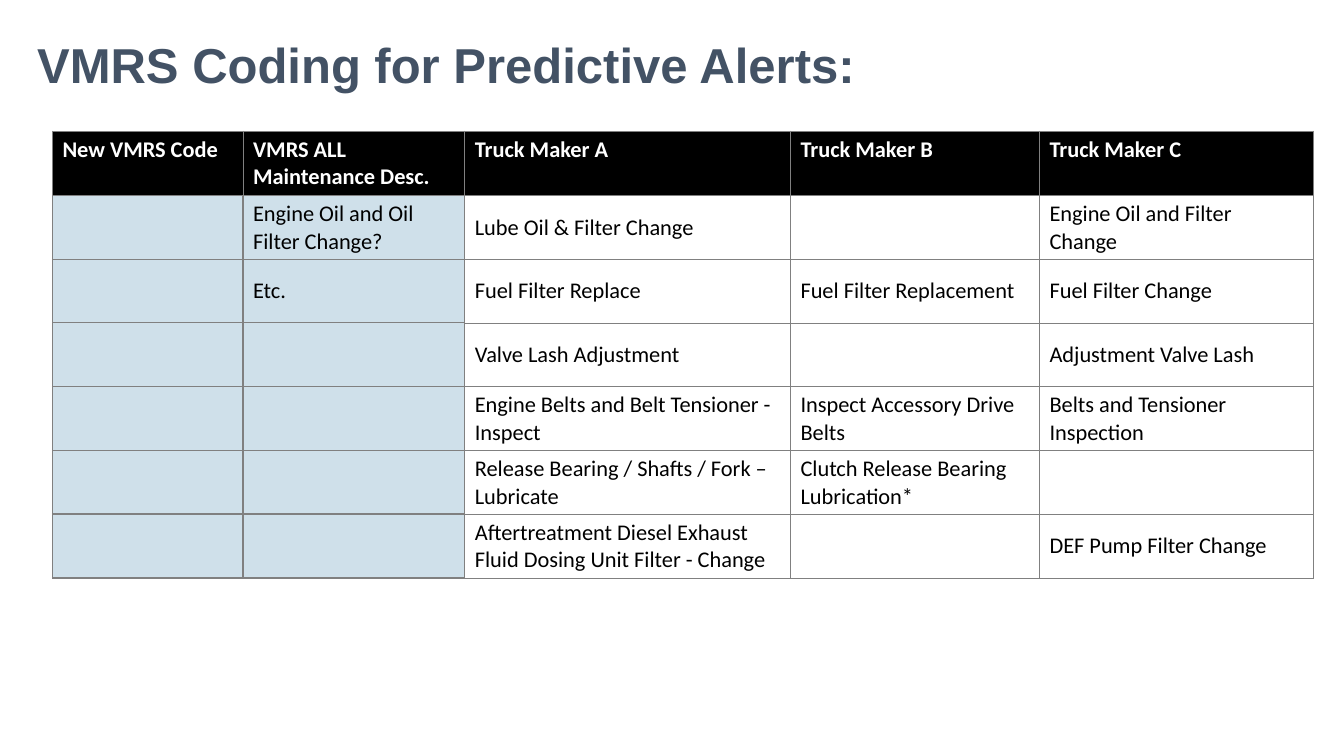
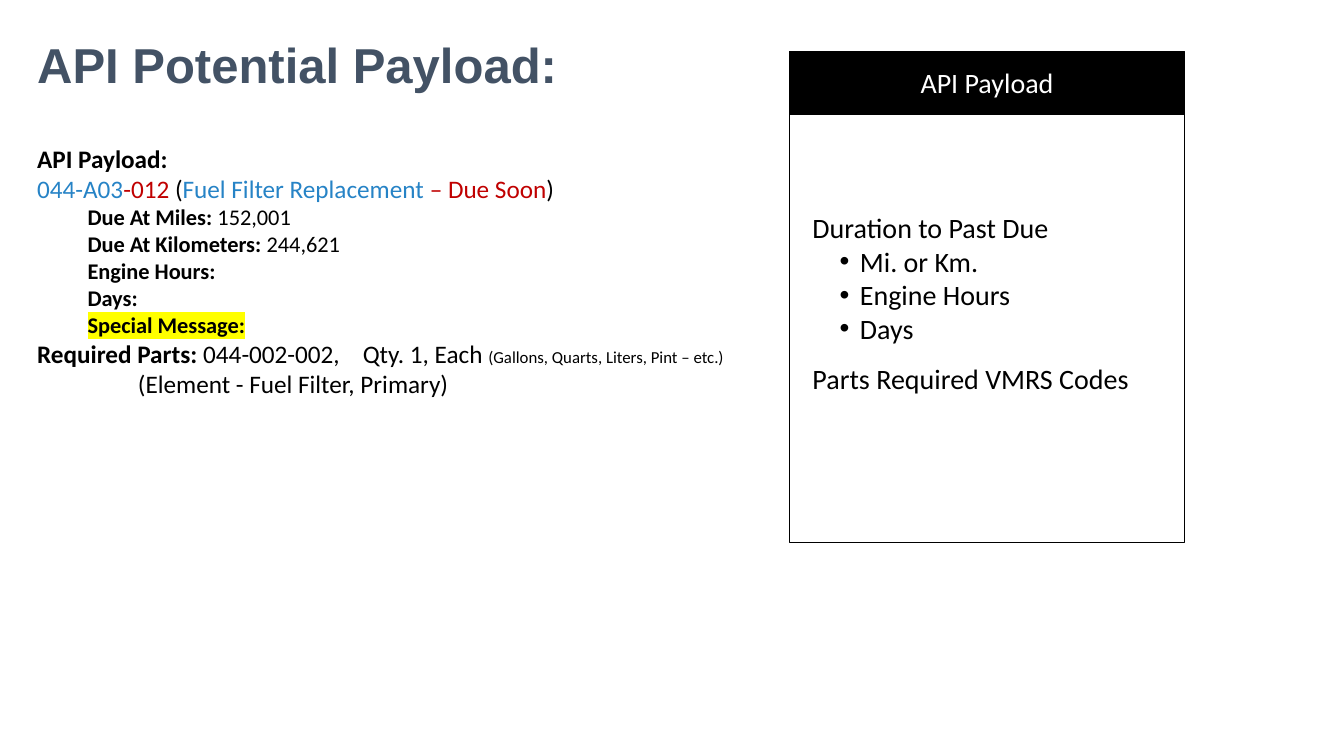
from lxml import etree
from pptx import Presentation
from pptx.dml.color import RGBColor
from pptx.enum.shapes import MSO_SHAPE
from pptx.enum.text import MSO_ANCHOR, PP_ALIGN
from pptx.oxml.ns import qn
from pptx.util import Pt

PX = 9144
TOP, MIDDLE = MSO_ANCHOR.TOP, MSO_ANCHOR.MIDDLE
LEFT, CENTER = PP_ALIGN.LEFT, PP_ALIGN.CENTER
RECTANGLE = MSO_SHAPE.RECTANGLE
HEADING_FONT, BODY_FONT = "Arial", "Calibri"
COLORS = {
    "title": "435265",
    "black": "000000",
    "white": "FFFFFF",
    "tint": "CFE0EA",
    "grid": "808080",
    "code": "2683C6",
    "alert": "C00000",
    "marker": "FFFF00",
}
CODE_COLUMNS = 2
COLUMN_WIDTHS = [189, 220, 323, 247, 272]
HEADER_HEIGHT, ROW_HEIGHT = 64, 63
ALERT_ROWS = [
    ["New VMRS Code", "VMRS ALL Maintenance Desc.",
     "Truck Maker A", "Truck Maker B", "Truck Maker C"],
    ["", "Engine Oil and Oil Filter Change?", "Lube Oil & Filter Change",
     "", "Engine Oil and Filter Change"],
    ["", "Etc.", "Fuel Filter Replace", "Fuel Filter Replacement",
     "Fuel Filter Change"],
    ["", "", "Valve Lash Adjustment", "", "Adjustment Valve Lash"],
    ["", "", "Engine Belts and Belt Tensioner - Inspect",
     "Inspect Accessory Drive Belts", "Belts and Tensioner Inspection"],
    ["", "", "Release Bearing / Shafts / Fork – Lubricate",
     "Clutch Release Bearing Lubrication*", ""],
    ["", "", "Aftertreatment Diesel Exhaust Fluid Dosing Unit Filter - Change",
     "", "DEF Pump Filter Change"],
]
DUE_DETAILS = [
    ("Due At Miles: ", "152,001"),
    ("Due At Kilometers: ", "244,621"),
    ("Engine Hours:", ""),
    ("Days:", ""),
]


def px(*lengths):
    return [length * PX for length in lengths]


def rgb(color):
    return RGBColor.from_string(COLORS[color])


def style_run(run, size, color="black", bold=False, font=BODY_FONT):
    run.font.size = Pt(size)
    run.font.bold = bold
    run.font.name = font
    run.font.color.rgb = rgb(color)


def highlight(run, color):
    marker = etree.Element(qn("a:highlight"))
    etree.SubElement(marker, qn("a:srgbClr"), val=COLORS[color])
    run.font._element.find(qn("a:latin")).addprevious(marker)


def indent(paragraph, left, hanging=0, bullet=None):
    properties = paragraph._p.get_or_add_pPr()
    properties.set("marL", str(left * PX))
    properties.set("indent", str(-hanging * PX))
    if bullet:
        etree.SubElement(properties, qn("a:buFont"), typeface="Arial")
        etree.SubElement(properties, qn("a:buChar"), char=bullet)


def add_tab_stop(paragraph, position):
    stops = etree.SubElement(paragraph._p.get_or_add_pPr(), qn("a:tabLst"))
    etree.SubElement(stops, qn("a:tab"), pos=str(position * PX), algn="l")


def next_paragraph(frame):
    first = frame.paragraphs[0]
    return frame.add_paragraph() if first.runs else first


def add_line(frame, *pieces):
    paragraph = next_paragraph(frame)
    for text, size, color, bold in pieces:
        run = paragraph.add_run()
        run.text = text
        style_run(run, size, color, bold)
    return paragraph


def add_text_area(slide, *box):
    frame = slide.shapes.add_textbox(*px(*box)).text_frame
    frame.word_wrap = True
    return frame


def add_title(slide, text):
    frame = add_text_area(slide, 27, 15, 1200, 105)
    frame.vertical_anchor = MIDDLE
    frame.text = text
    heading = frame.paragraphs[0]
    heading.line_spacing = 0.9
    style_run(heading.runs[0], 35, "title", True, HEADING_FONT)


def add_panel(slide, box, fill):
    panel = slide.shapes.add_shape(RECTANGLE, *px(*box))
    panel.shadow.inherit = False
    panel.fill.solid()
    panel.fill.fore_color.rgb = rgb(fill)
    panel.line.color.rgb = rgb("black")
    panel.line.width = Pt(1)
    frame = panel.text_frame
    frame.word_wrap = True
    frame.vertical_anchor = MIDDLE
    return frame


def set_border(cell, side, width):
    properties = cell._tc.get_or_add_tcPr()
    edge = etree.Element(qn("a:" + side), w=str(Pt(width)))
    fill = etree.SubElement(edge, qn("a:solidFill"))
    etree.SubElement(fill, qn("a:srgbClr"), val=COLORS["grid"])
    borders = [child for child in properties
               if child.tag.startswith(qn("a:ln"))]
    properties.insert(len(borders), edge)


def is_code_cell(row, column):
    return row > 0 and 0 <= column < CODE_COLUMNS


def fill_cell(cell, row, column, text):
    header = row == 0
    body_fill = "tint" if is_code_cell(row, column) else "white"
    cell.fill.solid()
    cell.fill.fore_color.rgb = rgb("black" if header else body_fill)
    cell.vertical_anchor = TOP if header else MIDDLE
    if text:
        cell.text = text
        style_run(cell.text_frame.paragraphs[0].runs[0], 16,
                  "white" if header else "black", header)
    neighbours = {"lnL": (row, column - 1), "lnR": (row, column + 1),
                  "lnT": (row - 1, column), "lnB": (row + 1, column)}
    for side, neighbour in neighbours.items():
        heavy = is_code_cell(row, column) or is_code_cell(*neighbour)
        set_border(cell, side, 1 if heavy else 0.5)


def add_alert_table(slide):
    row_heights = [HEADER_HEIGHT] + [ROW_HEIGHT] * (len(ALERT_ROWS) - 1)
    table = slide.shapes.add_table(
        len(ALERT_ROWS), len(COLUMN_WIDTHS),
        *px(52, 130, sum(COLUMN_WIDTHS), sum(row_heights))).table
    table.first_row = False
    table.horz_banding = False
    for column, width in zip(table.columns, COLUMN_WIDTHS):
        column.width = width * PX
    for row, height in enumerate(row_heights):
        table.rows[row].height = height * PX
        for column, text in enumerate(ALERT_ROWS[row]):
            fill_cell(table.cell(row, column), row, column, text)


def add_payload_example(slide):
    frame = add_text_area(slide, 27, 137, 714, 296)
    add_line(frame, ("API Payload:", 18, "black", True))
    add_line(frame,
             ("044-A03", 18, "code", False),
             ("-012", 18, "alert", False),
             (" (", 18, "black", False),
             ("Fuel Filter Replacement ", 18, "code", False),
             ("– Due Soon", 18, "alert", False),
             (")", 18, "black", False))
    for label, value in DUE_DETAILS:
        pieces = [(label, 16, "black", True)]
        if value:
            pieces.append((value, 16, "black", False))
        indent(add_line(frame, *pieces), 50)
    message = add_line(frame, ("Special Message:", 16, "black", True))
    indent(message, 50)
    highlight(message.runs[0], "marker")
    parts = add_line(frame,
                     ("Required Parts: ", 18, "black", True),
                     ("044-002-002,\tQty. 1, Each ", 18, "black", False),
                     ("(Gallons, Quarts, Liters, Pint – etc.)",
                      12, "black", False))
    add_tab_stop(parts, 323)
    element = add_line(frame, ("(Element - Fuel Filter, Primary)",
                               18, "black", False))
    indent(element, 100)


def add_payload_card(slide):
    left, width = 783, 392
    content = add_panel(slide, (left, 98, width, 440), "white")
    content.margin_bottom = 40 * PX
    duration = add_line(content, ("Duration to Past Due", 20, "black", False))
    indent(duration, 13)
    for unit in ("Mi. or Km.", "Engine Hours", "Days"):
        indent(add_line(content, (unit, 20, "black", False)), 60, 20, "•")
    parts = add_line(content, ("Parts Required VMRS Codes",
                               20, "black", False))
    indent(parts, 13)
    parts.space_before = Pt(12)
    for paragraph in content.paragraphs:
        paragraph.alignment = LEFT
    header = add_panel(slide, (left, 51, width, 62), "black")
    add_line(header, ("API Payload", 20, "white", False)).alignment = CENTER


def main():
    deck = Presentation()
    deck.slide_width, deck.slide_height = px(1333, 750)
    blank = deck.slide_layouts[6]

    coding = deck.slides.add_slide(blank)
    add_title(coding, "VMRS Coding for Predictive Alerts:")
    add_alert_table(coding)

    payload = deck.slides.add_slide(blank)
    add_title(payload, "API Potential Payload:")
    add_payload_card(payload)
    add_payload_example(payload)

    deck.save("out.pptx")


if __name__ == "__main__":
    main()
